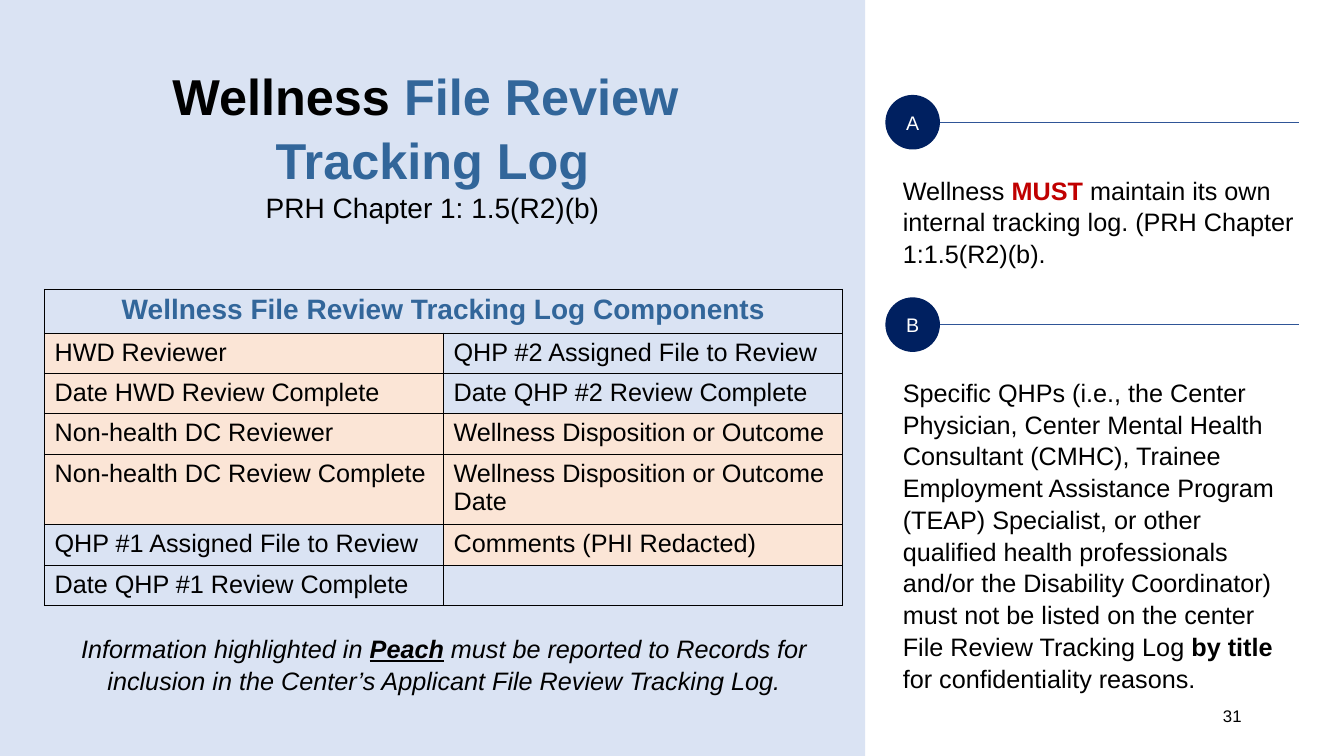
from pptx import Presentation, util as u
from pptx.dml.color import RGBColor
from pptx.enum import shapes, text
from pptx.oxml.ns import qn
from lxml import etree

COLORS = {
    "black": "000000", "white": "FFFFFF", "panel": "DAE3F3", "navy": "002060",
    "blue": "32669A", "rule": "2F5597", "red": "C00000", "peach": "FBE5D6",
}
COLUMNS, ROWS = 160, 90
LEFT, CENTER, RIGHT = text.PP_ALIGN.LEFT, text.PP_ALIGN.CENTER, text.PP_ALIGN.RIGHT


def rgb(name):
    return RGBColor.from_string(COLORS[name])


def add_run(p, words, size=18, color="black", bold=False, italic=False, underline=False):
    r = p.add_run()
    r.text = words
    f = r.font
    f.name, f.size, f.color.rgb = "Arial", u.Pt(size), rgb(color)
    f.bold, f.italic, f.underline = bold, italic, underline


def write(tf, paragraphs, align=LEFT, spacing=1.05, anchor=text.MSO_ANCHOR.TOP, **style):
    """Fill a text frame; each paragraph is a list of (words, own format) pairs."""
    tf.word_wrap = True
    tf.vertical_anchor = anchor
    for i, runs in enumerate(paragraphs):
        p = tf.add_paragraph() if i else tf.paragraphs[0]
        p.alignment, p.line_spacing = align, spacing
        p.space_before = u.Pt(0)
        for words, own in runs:
            add_run(p, words, **{**style, **own})


class Deck:
    """Holds the presentation and its slide; lengths are grid columns and rows."""

    def __init__(self):
        self.prs = Presentation()
        self.prs.slide_width, self.prs.slide_height = u.Inches(13.33), u.Inches(7.5)
        self.s = self.prs.slides.add_slide(self.prs.slide_layouts[5])

    def x(self, columns):
        return round(self.prs.slide_width * columns / COLUMNS)

    def y(self, rows):
        return round(self.prs.slide_height * rows / ROWS)

    def box(self, left, top, width, height):
        return self.x(left), self.y(top), self.x(width), self.y(height)

    def shape(self, kind, box, fill):
        sp = self.s.shapes.add_shape(kind, *self.box(*box))
        sp.shadow.inherit = False
        sp.fill.solid()
        sp.fill.fore_color.rgb = rgb(fill)
        sp.line.fill.background()
        return sp

    def title(self, box, paragraphs, **style):
        sp = self.s.shapes.title
        sp.left, sp.top, sp.width, sp.height = self.box(*box)
        sp.text_frame.auto_size = text.MSO_AUTO_SIZE.NONE
        write(sp.text_frame, paragraphs, **style)
        return sp

    def text(self, box, paragraphs, **style):
        sp = self.s.shapes.add_textbox(*self.box(*box))
        write(sp.text_frame, paragraphs, **style)

    def badge(self, box, letter):
        sp = self.shape(shapes.MSO_SHAPE.OVAL, box, "navy")
        tf = sp.text_frame
        tf.margin_left = tf.margin_right = 0
        write(tf, [[(letter, {})]], align=CENTER, spacing=1.0,
              anchor=text.MSO_ANCHOR.MIDDLE, size=14, color="white")

    def rule(self, start, end, row):
        line = self.s.shapes.add_connector(
            shapes.MSO_CONNECTOR.STRAIGHT, self.x(start), self.y(row), self.x(end), self.y(row))
        line.line.color.rgb, line.line.width = rgb("rule"), u.Pt(0.5)
        etree.SubElement(line._element.spPr, qn("a:effectLst"))

    def borders(self, cell):
        tc_pr = cell._tc.get_or_add_tcPr()
        for i, side in enumerate(("lnL", "lnR", "lnT", "lnB")):
            ln = etree.Element(qn("a:" + side), w=str(u.Pt(1)))
            fill = etree.SubElement(ln, qn("a:solidFill"))
            etree.SubElement(fill, qn("a:srgbClr"), val=COLORS["black"])
            tc_pr.insert(i, ln)

    def table(self, left, top, width, heights, header, rows):
        """Draw a merged header over rows of (words, fill) cells."""
        box = self.box(left, top, width, sum(heights))
        t = self.s.shapes.add_table(len(heights), 2, *box).table
        t.first_row = t.horz_banding = False
        for row, height in zip(t.rows, heights):
            row.height = self.y(height)
        for column in t.columns:
            column.width = self.x(width / 2)
        t.cell(0, 0).merge(t.cell(0, 1))
        for cell in t.iter_cells():
            cell.fill.background()
            self.borders(cell)
        write(t.cell(0, 0).text_frame, [[(header, {})]], align=CENTER, spacing=1.0,
              size=20, color="blue", bold=True)
        for i, row in enumerate(rows, 1):
            for j, (words, fill) in enumerate(row):
                cell = t.cell(i, j)
                if fill:
                    cell.fill.solid()
                    cell.fill.fore_color.rgb = rgb(fill)
                write(cell.text_frame, [[(words, {})]] if words else [], spacing=1.0)


COMPONENTS = [
    [("HWD Reviewer", "peach"), ("QHP #2 Assigned File to Review", None)],
    [("Date HWD Review Complete", "peach"), ("Date QHP #2 Review Complete", None)],
    [("Non-health DC Reviewer", "peach"), ("Wellness Disposition or Outcome", "peach")],
    [("Non-health DC Review Complete", "peach"), ("Wellness Disposition or Outcome Date", "peach")],
    [("QHP #1 Assigned File to Review", None), ("Comments (PHI Redacted)", "peach")],
    [("Date QHP #1 Review Complete", None), ("", None)],
]

POINTS = [
    ("A", 12.1, [
        ("Wellness ", {}), ("MUST ", {"color": "red", "bold": True}),
        ("maintain its own internal tracking log. (PRH Chapter 1:1.5(R2)(b).", {})]),
    ("B", 37.5, [
        ("Specific QHPs (i.e., the Center Physician, Center Mental Health Consultant (CMHC), "
         "Trainee Employment Assistance Program (TEAP) Specialist, or other qualified health "
         "professionals and/or the Disability Coordinator) must not be listed on the center "
         "File Review Tracking Log ", {}),
        ("by title ", {"bold": True}), ("for confidentiality reasons.", {})]),
]


def main():
    deck = Deck()
    panel = deck.shape(shapes.MSO_SHAPE.RECTANGLE, (0, 0, 103, ROWS), "panel")
    title = deck.title((0, 6.8, 103, 19.8), [
        [("Wellness ", {"color": "black"}), ("File Review ", {})],
        [("Tracking Log", {})],
        [("PRH Chapter 1: 1.5(R2)(b)", {"size": 20, "color": "black", "bold": False})],
    ], align=CENTER, size=36, color="blue", bold=True)
    title._element.addprevious(panel._element)

    badge_left, badge_size, first_row, pitch = 105.4, 6.5, 11.3, 24.1
    for i, (letter, height, runs) in enumerate(POINTS):
        top = first_row + i * pitch
        deck.badge((badge_left, top, badge_size, badge_size), letter)
        deck.rule(badge_left + badge_size, 154.6, top + badge_size / 2)
        deck.text((106.3, top + 8.75, 49.3, height), [runs])

    deck.table(5.3, 34.45, 95, [5.2, 4.8, 4.8, 4.8, 8.4, 4.8, 4.8],
               "Wellness File Review Tracking Log Components", COMPONENTS)
    deck.text((7, 74.6, 91.7, 8.5), [[
        ("Information highlighted in ", {}), ("Peach", {"bold": True, "underline": True}),
        (" must be reported to Records for inclusion in the Center’s Applicant "
         "File Review Tracking Log.", {})]], align=CENTER, italic=True)
    deck.text((113, 83.4, 36, 4.8), [[("31", {})]], align=RIGHT, spacing=1.0, size=12)
    deck.prs.save("out.pptx")


if __name__ == "__main__":
    main()
